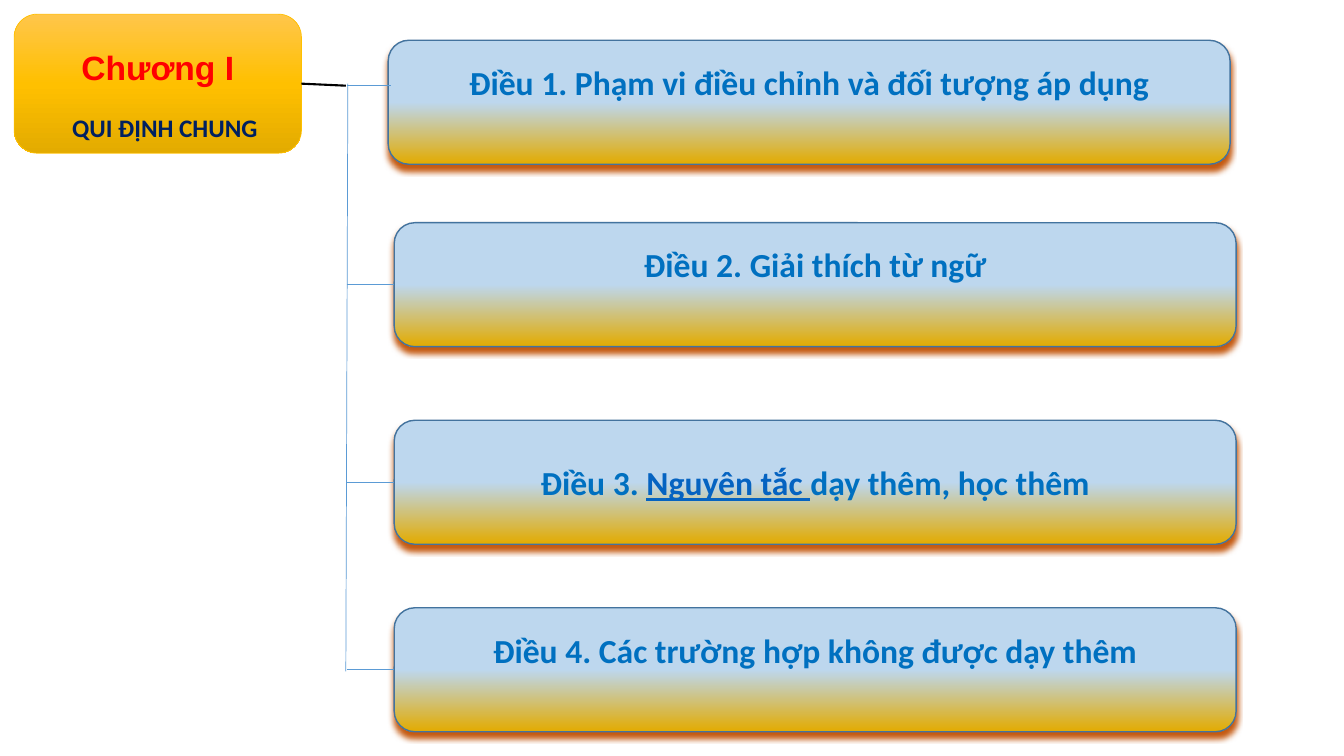
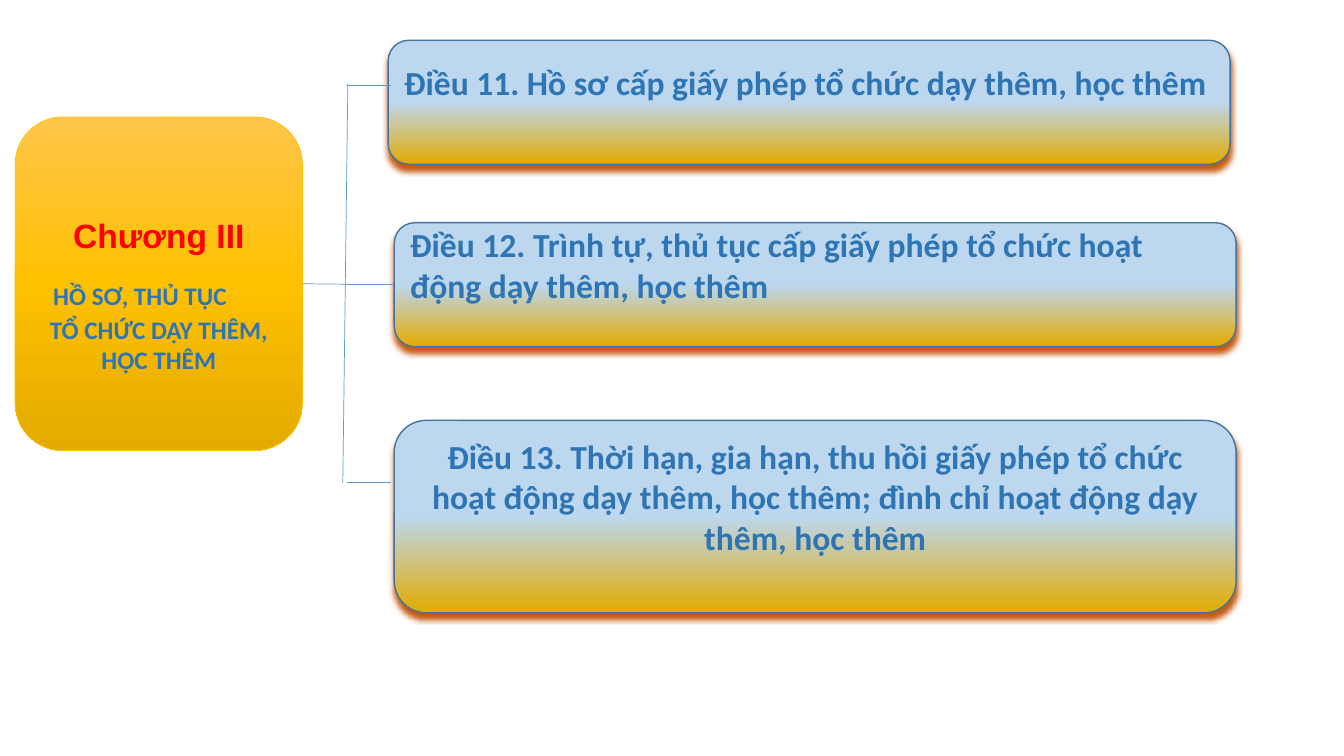
"""Build two chapter overview slides linking each chapter to its articles."""
from dataclasses import dataclass
from typing import Optional

from lxml.etree import SubElement
from pptx import Presentation
from pptx.dml.color import RGBColor
from pptx.enum.shapes import MSO_CONNECTOR, MSO_SHAPE
from pptx.enum.text import MSO_ANCHOR, PP_ALIGN
from pptx.oxml.ns import qn
from pptx.shapes.autoshape import Shape
from pptx.shapes.connector import Connector
from pptx.slide import Slide
from pptx.text.text import _Run
from pptx.util import Inches, Pt

COLORS = {
    "amber_light": "FFC64B",
    "amber": "FFC000",
    "amber_dark": "E3AB00",
    "pale_blue": "BDD7EE",
    "article_border": "43739E",
    "article_shadow": "C55A11",
    "branch": "5B9BD5",
    "black": "000000",
    "red": "FF0000",
    "navy": "002060",
    "sky": "0070C0",
    "steel": "2E75B6",
    "underlined": "0563C1",
}
CHAPTER_STOPS = ((0, "amber_light"), (50, "amber"), (100, "amber_dark"))
ARTICLE_STOPS = ((50, "pale_blue"), (100, "amber_dark"))
CHAPTER_WIDTH = 2.85
ARTICLE_WIDTH = 8.35
BRANCH_START = 3.44
BRANCH_END = 3.88

Point = tuple[float, float]
Box = tuple[float, float, float, float]


@dataclass(frozen=True)
class TitleLine:
    """One line under the chapter number."""

    text: str
    space_before: float
    align: PP_ALIGN = PP_ALIGN.CENTER
    indent: float = 0


@dataclass(frozen=True)
class Article:
    """An article box; phrases alternate between plain and underlined text."""

    phrases: tuple[str, ...]
    left: float
    top: float
    height: float = 1.23
    align: PP_ALIGN = PP_ALIGN.CENTER
    lift: float = 0.4
    branch_y: Optional[float] = None


@dataclass(frozen=True)
class Chapter:
    """A chapter box with its trunk line and articles."""

    number: str
    title: tuple[TitleLine, ...]
    title_color: str
    left: float
    top: float
    height: float
    link_end: Point
    link_color: str
    link_width: float
    trunk_end: Point
    article_color: str
    articles: tuple[Article, ...]


CHAPTERS = (
    Chapter(
        "Chương I", (TitleLine("QUI ĐỊNH CHUNG", 18, indent=0.14),), "navy",
        0.14, 0.14, 1.38, (3.43, 0.85), "black", 1.5, (3.43, 6.66), "sky",
        (
            Article(("Điều 1. Phạm vi điều chỉnh và đối tượng áp dụng",),
                    3.85, 0.4, branch_y=0.85),
            Article(("Điều 2. Giải thích từ ngữ",), 3.91, 2.21),
            Article(("Điều 3. ", "Nguyên tắc ", "dạy thêm, học thêm"),
                    3.91, 4.17, lift=0),
            Article(("Điều 4. Các trường hợp không được dạy thêm",), 3.91, 6.03),
        ),
    ),
    Chapter(
        "Chương III",
        (
            TitleLine("HỒ SƠ, THỦ TỤC", 18, PP_ALIGN.LEFT, 0.14),
            TitleLine("TỔ CHỨC DẠY THÊM, HỌC THÊM", 3),
        ),
        "steel", 0.15, 1.16, 3.31, (3.45, 2.82), "branch", 0.5, (3.4, 4.79), "steel",
        (
            Article(("Điều 11. Hồ sơ cấp giấy phép tổ chức dạy thêm, học thêm",),
                    3.85, 0.4, align=PP_ALIGN.LEFT, branch_y=0.85),
            Article(("Điều 12. Trình tự, thủ tục cấp giấy phép tổ chức hoạt động "
                     "dạy thêm, học thêm",),
                    3.91, 2.21, align=PP_ALIGN.LEFT),
            Article(("Điều 13. Thời hạn, gia hạn, thu hồi giấy phép tổ chức hoạt động "
                     "dạy thêm, học thêm; đình chỉ hoạt động dạy thêm, học thêm",),
                    3.91, 4.17, height=1.91, branch_y=4.79),
        ),
    ),
)


def rgb(color: str) -> RGBColor:
    """Return a named palette colour."""
    return RGBColor.from_string(COLORS[color])


def format_run(run: _Run, font: str, size: float, color: str) -> None:
    """Apply the bold text style."""
    run.font.name = font
    run.font.size = Pt(size)
    run.font.bold = True
    run.font.color.rgb = rgb(color)


def add_rounded_box(slide: Slide, box: Box, stops: tuple[tuple[int, str], ...],
                    border: str, border_width: float) -> Shape:
    """Draw a rounded box with a vertical gradient."""
    rounded = slide.shapes.add_shape(
        MSO_SHAPE.ROUNDED_RECTANGLE, *(Inches(length) for length in box))
    rounded.shadow.inherit = False
    rounded.fill.gradient()
    rounded.fill.gradient_angle = 270
    stop_list = rounded.element.spPr.find(f"{qn('a:gradFill')}/{qn('a:gsLst')}")
    stop_list.clear()
    for position, color in stops:
        stop = SubElement(stop_list, qn("a:gs"), pos=str(position * 1000))
        SubElement(stop, qn("a:srgbClr"), val=COLORS[color])
    rounded.line.color.rgb = rgb(border)
    rounded.line.width = Pt(border_width)
    rounded.text_frame.word_wrap = True
    rounded.text_frame.vertical_anchor = MSO_ANCHOR.MIDDLE
    return rounded


def add_line(slide: Slide, start: Point, end: Point, color: str = "branch",
             width: float = 0.5) -> Connector:
    """Draw a straight line without a shadow."""
    line = slide.shapes.add_connector(
        MSO_CONNECTOR.STRAIGHT, *(Inches(length) for length in (*start, *end)))
    line.line.color.rgb = rgb(color)
    line.line.width = Pt(width)
    SubElement(line.element.spPr, qn("a:effectLst"))
    return line


def add_chapter_box(slide: Slide, chapter: Chapter) -> Shape:
    """Draw the chapter number and title."""
    box = (chapter.left, chapter.top, CHAPTER_WIDTH, chapter.height)
    chapter_box = add_rounded_box(slide, box, CHAPTER_STOPS, "amber", 0.5)
    frame = chapter_box.text_frame
    frame.margin_top, frame.margin_bottom = Inches(0.22), 0
    frame.text = "\n".join([chapter.number, *(line.text for line in chapter.title)])
    number, *title = frame.paragraphs
    number.alignment = PP_ALIGN.CENTER
    format_run(number.runs[0], "Arial", 24, "red")
    for paragraph, line in zip(title, chapter.title):
        paragraph.alignment = line.align
        paragraph.space_before = Pt(line.space_before)
        paragraph._p.get_or_add_pPr().set("marL", str(Inches(line.indent)))
        format_run(paragraph.runs[0], "Calibri", 18, chapter.title_color)
    return chapter_box


def add_article_box(slide: Slide, article: Article, color: str) -> Shape:
    """Draw an article box with its coloured shadow."""
    box = (article.left, article.top, ARTICLE_WIDTH, article.height)
    article_box = add_rounded_box(slide, box, ARTICLE_STOPS, "article_border", 1)
    effects = article_box.element.spPr.find(qn("a:effectLst"))
    shadow = SubElement(effects, qn("a:outerShdw"), blurRad=str(Pt(4)),
                        dist=str(Pt(4)), dir="5400000", algn="t", rotWithShape="0")
    SubElement(shadow, qn("a:srgbClr"), val=COLORS["article_shadow"])
    frame = article_box.text_frame
    frame.margin_top, frame.margin_bottom = 0, Inches(article.lift)
    paragraph = frame.paragraphs[0]
    paragraph.alignment = article.align
    for index, phrase in enumerate(article.phrases):
        run = paragraph.add_run()
        run.text = phrase
        underlined = index % 2 == 1
        format_run(run, "Calibri", 24, "underlined" if underlined else color)
        run.font.underline = underlined
    return article_box


def add_branch(slide: Slide, article: Article, article_box: Shape) -> None:
    """Draw the line from the trunk to an article."""
    middle = article.top + article.height / 2
    height = middle if article.branch_y is None else article.branch_y
    branch = add_line(slide, (BRANCH_START, height), (BRANCH_END, height))
    if article.branch_y is None:
        branch.end_connect(article_box, 1)


def add_chapter_slide(slide: Slide, chapter: Chapter) -> None:
    """Draw a whole chapter tree."""
    chapter_box = add_chapter_box(slide, chapter)
    chapter_side = (chapter.left + CHAPTER_WIDTH, chapter.top + chapter.height / 2)
    link = add_line(slide, chapter_side, chapter.link_end,
                    chapter.link_color, chapter.link_width)
    link.begin_connect(chapter_box, 3)
    add_line(slide, (3.45, 0.83), chapter.trunk_end)
    for article in chapter.articles:
        article_box = add_article_box(slide, article, chapter.article_color)
        add_branch(slide, article, article_box)


def main() -> None:
    """Build and save the presentation."""
    presentation = Presentation()
    presentation.slide_width = Inches(13.33)
    presentation.slide_height = Inches(7.5)
    blank = presentation.slide_layouts[6]
    for chapter in CHAPTERS:
        add_chapter_slide(presentation.slides.add_slide(blank), chapter)
    presentation.save("out.pptx")


if __name__ == "__main__":
    main()
